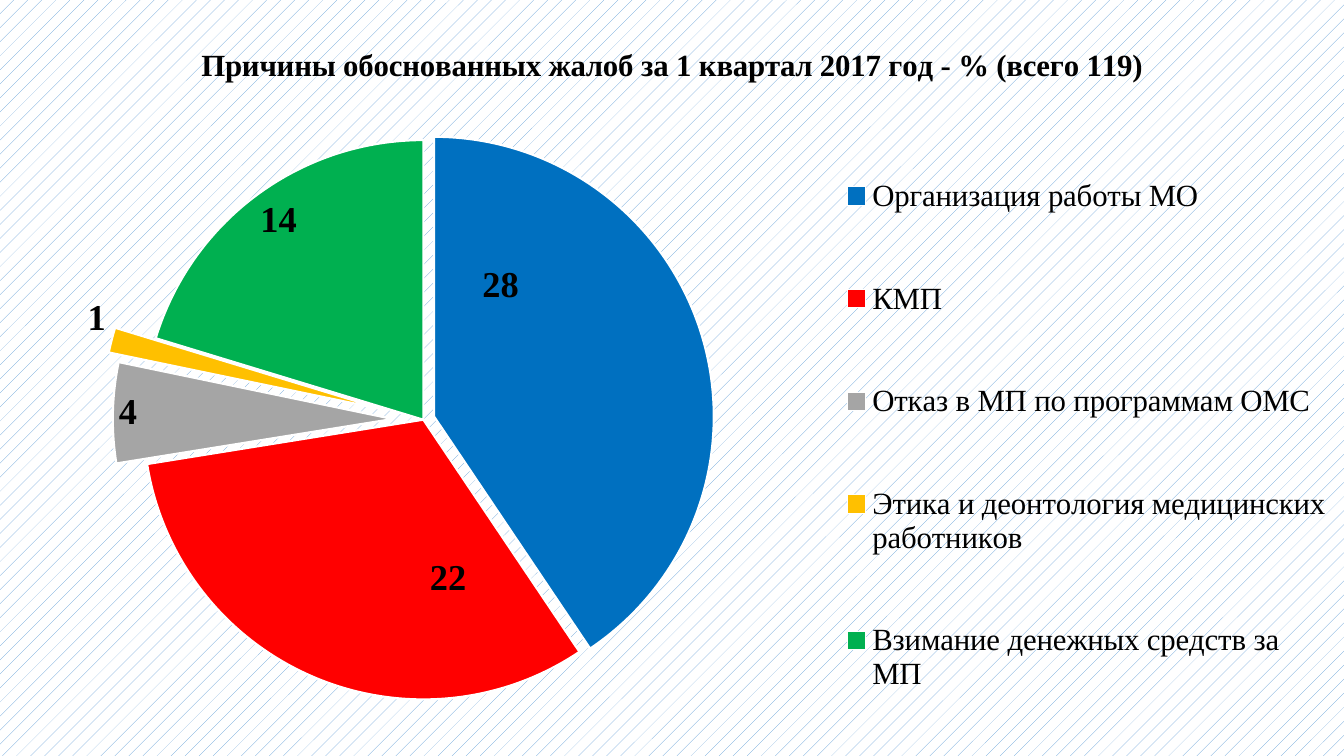
from lxml import etree
from pptx import Presentation
from pptx.chart.data import CategoryChartData
from pptx.dml.color import RGBColor
from pptx.enum.chart import XL_CHART_TYPE as CT, XL_LABEL_POSITION as LP, XL_LEGEND_POSITION as LEG
from pptx.enum.dml import MSO_PATTERN
from pptx.oxml.ns import qn
from pptx.util import Inches, Pt

COLORS = {
    "blue": "0070C0", "red": "FF0000", "gray": "A5A5A5", "amber": "FFC000",
    "green": "00B050", "pattern": "5B9BD5", "white": "FFFFFF", "text": "000000",
}
FONT = "Times New Roman"
TITLE = "Причины обоснованных жалоб за 1 квартал 2017 год - % (всего 119)"
SERIES = "Series 1"
CAUSES = [
    ("Организация работы МО", 28, "blue", 4, LP.CENTER, (-0.05, -0.12)),
    ("КМП", 22, "red", 0, LP.CENTER, (0.06, 0.04)),
    ("Отказ в МП по программам ОМС", 4, "gray", 11, LP.INSIDE_END, None),
    ("Этика и деонтология медицинских работников", 1, "amber", 15, LP.OUTSIDE_END, None),
    ("Взимание денежных средств за МП", 14, "green", 0, LP.INSIDE_END, None),
]
LAYOUTS = {
    "pie": {"layoutTarget": "inner", "xMode": "edge", "yMode": "edge",
            "x": 0.1, "y": 0.16, "w": 0.43, "h": 0.74},
    "legend": {"xMode": "edge", "yMode": "edge",
               "x": 0.63, "y": 0.12, "w": 0.36, "h": 0.86},
}


def rgb(name):
    return RGBColor.from_string(COLORS[name])


def style(font, size, bold=False):
    font.name = FONT
    font.size = Pt(size)
    font.bold = bold
    font.color.rgb = rgb("text")


def place(parent, index, values):
    for old in parent.findall(qn("c:layout")):
        parent.remove(old)
    layout = etree.Element(qn("c:layout"))
    manual = etree.SubElement(layout, qn("c:manualLayout"))
    for tag, value in values.items():
        etree.SubElement(manual, qn(f"c:{tag}")).set("val", str(value))
    parent.insert(index, layout)


def add_pie(s):
    data = CategoryChartData()
    data.categories = [cause[0] for cause in CAUSES]
    data.add_series(SERIES, [cause[1] for cause in CAUSES])
    chart = s.shapes.add_chart(
        CT.PIE, Inches(0), Inches(0.19), Inches(13.33), Inches(7.5), data).chart
    chart.font.name = "Calibri"
    chart.font.size = Pt(10)
    chart.font.color.rgb = rgb("text")
    return chart


def add_title(chart):
    p = chart.chart_title.text_frame.paragraphs[0]
    r = p.add_run()
    r.text = TITLE
    style(r.font, 22, True)


def add_legend(chart):
    chart.has_legend = True
    legend = chart.legend
    legend.position = LEG.RIGHT
    legend.include_in_layout = False
    style(legend.font, 22)
    place(legend._element, 1, LAYOUTS["legend"])


def style_slices(chart):
    plot = chart.plots[0]
    plot.vary_by_categories = True
    series = plot.series[0]
    labels = series.data_labels
    labels.show_value = True
    style(labels.font, 26, True)
    for i, (_, _, color, explosion, position, shift) in enumerate(CAUSES):
        point = series.points[i]
        point.format.fill.solid()
        point.format.fill.fore_color.rgb = rgb(color)
        point.format.line.color.rgb = rgb("white")
        point.format.line.width = Pt(1.5)
        dpt = series._element.findall(qn("c:dPt"))[i]
        burst = etree.Element(qn("c:explosion"))
        burst.set("val", str(explosion))
        dpt.find(qn("c:spPr")).addprevious(burst)
        label = point.data_label
        style(label.font, 26, True)
        label.position = position
        if shift:
            dlbl = labels._element.findall(qn("c:dLbl"))[i]
            place(dlbl, 1, dict(zip("xy", shift)))


def main():
    prs = Presentation()
    prs.slide_width, prs.slide_height = Inches(13.33), Inches(7.5)
    s = prs.slides.add_slide(prs.slide_layouts[6])
    fill = s.background.fill
    fill.patterned()
    fill.pattern = MSO_PATTERN.PERCENT_5
    fill.fore_color.rgb = rgb("pattern")
    fill.back_color.rgb = rgb("white")
    chart = add_pie(s)
    add_title(chart)
    add_legend(chart)
    style_slices(chart)
    place(chart._chartSpace.find(f".//{qn('c:plotArea')}"), 0, LAYOUTS["pie"])
    prs.save("out.pptx")


if __name__ == "__main__":
    main()
